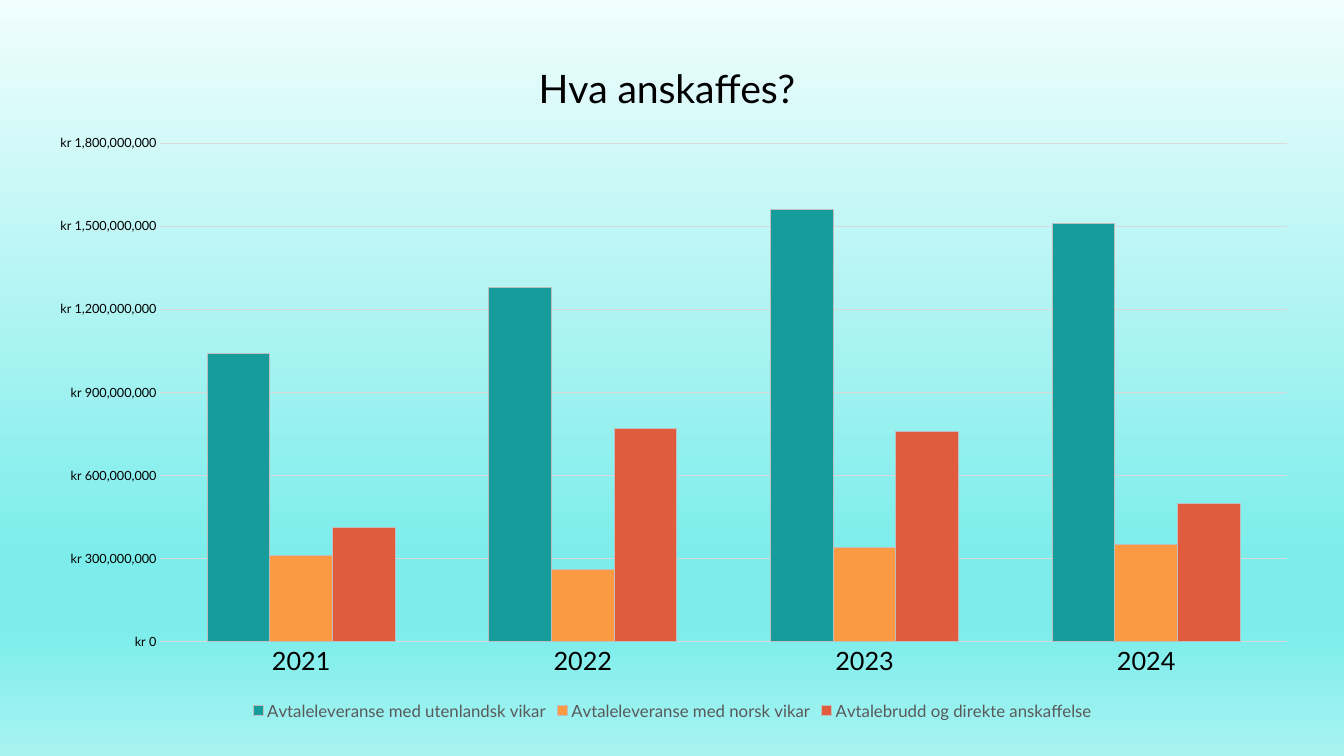
from lxml import etree
from pptx import Presentation
from pptx.chart.data import CategoryChartData
from pptx.dml.color import RGBColor
from pptx.enum import chart as kinds
from pptx.oxml import ns
from pptx.util import Inches, Pt

FONT = "Lato"
BLACK = RGBColor(0x00, 0x00, 0x00)
GREY = RGBColor(0x59, 0x59, 0x59)
GRID = RGBColor(0xD9, 0xD9, 0xD9)
OUTLINE = RGBColor(0xBF, 0xBF, 0xBF)
TEAL = RGBColor(0x16, 0x9C, 0x9A)
ORANGE = RGBColor(0xFA, 0x9A, 0x42)
RED = RGBColor(0xE1, 0x5C, 0x3D)
PALE = RGBColor(0xF0, 0xFD, 0xFD)
AQUA = RGBColor(0x7C, 0xED, 0xEB)
LIGHT_AQUA = RGBColor(0xA8, 0xF3, 0xF2)

BACKGROUND_STOPS = [(0, PALE), (74, AQUA), (83, AQUA), (100, LIGHT_AQUA)]
MILLION = 1_000_000
YEARS = ["2021", "2022", "2023", "2024"]
SERIES = [  # name, colour, millions of kroner per year
    ("Avtaleleveranse med utenlandsk vikar", TEAL, [1040, 1280, 1560, 1510]),
    ("Avtaleleveranse med norsk vikar", ORANGE, [310, 260, 340, 350]),
    ("Avtalebrudd og direkte anskaffelse", RED, [410, 770, 760, 500]),
]


def set_background(page, stops):
    """Fill the page with a gradient running from top to bottom."""
    fill = page.background.fill
    fill.gradient()
    gradient = page.background._cSld.find(".//" + ns.qn("a:gradFill"))
    stop_list = gradient.find(ns.qn("a:gsLst"))
    for stop in list(stop_list):
        stop_list.remove(stop)
    for percent, color in stops:
        stop = etree.SubElement(stop_list, ns.qn("a:gs"), pos=str(percent * 1000))
        etree.SubElement(stop, ns.qn("a:srgbClr"), val=str(color))
    gradient.find(ns.qn("a:lin")).set("ang", str(90 * 60000))


def format_font(font, size, color=BLACK):
    font.name, font.size, font.bold = FONT, Pt(size), False
    font.color.rgb = color


def place(element, index, **fractions):
    """Give a chart part a manual layout, in fractions of the chart."""
    layout = element.find(ns.qn("c:layout"))
    if layout is None:
        layout = etree.Element(ns.qn("c:layout"))
        element.insert(index, layout)
    manual = etree.SubElement(layout, ns.qn("c:manualLayout"))
    if "w" in fractions:
        etree.SubElement(manual, ns.qn("c:layoutTarget"), val="inner")
    for mode in ("xMode", "yMode"):
        etree.SubElement(manual, ns.qn("c:" + mode), val="edge")
    for name, value in fractions.items():
        etree.SubElement(manual, ns.qn("c:" + name), val=str(value))


def add_title(chart, wording):
    chart.has_title = True
    para = chart.chart_title.text_frame.paragraphs[0]
    span = para.add_run()
    span.text = wording
    format_font(span.font, 28)
    place(chart.chart_title._element, 1, x=0.39, y=0.03)


def format_axis(axis, size):
    axis.major_tick_mark = axis.minor_tick_mark = kinds.XL_TICK_MARK.NONE
    axis.format.line.fill.background()
    format_font(axis.tick_labels.font, size)


def format_scale(axis):
    axis.minimum_scale, axis.maximum_scale = 0, 1800 * MILLION
    axis.major_unit = 300 * MILLION
    axis.tick_labels.number_format = '"kr"\\ #,##0'
    axis.tick_labels.number_format_is_linked = False
    axis.has_major_gridlines = True
    line = axis.major_gridlines.format.line
    line.color.rgb, line.width = GRID, Pt(0.75)


def add_legend(chart):
    chart.has_legend = True
    chart.legend.position = kinds.XL_LEGEND_POSITION.BOTTOM
    chart.legend.include_in_layout = False
    format_font(chart.legend.font, 12, GREY)


def add_column_chart(page):
    data = CategoryChartData()
    data.categories = YEARS
    for name, _, millions in SERIES:
        data.add_series(name, [value * MILLION for value in millions])
    chart = page.shapes.add_chart(
        kinds.XL_CHART_TYPE.COLUMN_CLUSTERED,
        Inches(0.32), Inches(0.32), Inches(12.7), Inches(6.87), data,
    ).chart
    format_font(chart.font, 10)

    # Columns
    plot = chart.plots[0]
    plot.gap_width, plot.overlap, plot.vary_by_categories = 150, 0, False
    for series, (_, color, _) in zip(plot.series, SERIES):
        series.format.fill.solid()
        series.format.fill.fore_color.rgb = color
        series.format.line.color.rgb = OUTLINE
        series.format.line.width = Pt(0.75)

    # Axes, title and legend
    format_axis(chart.category_axis, 18)
    format_axis(chart.value_axis, 9)
    format_scale(chart.value_axis)
    add_title(chart, "Hva anskaffes?")
    add_legend(chart)
    plot_area = chart._chartSpace.chart.plotArea
    place(plot_area, 0, x=0.1, y=0.16, w=0.88, h=0.72)


def main():
    deck = Presentation()
    deck.slide_width, deck.slide_height = Inches(13.33), Inches(7.5)
    page = deck.slides.add_slide(deck.slide_layouts[6])
    set_background(page, BACKGROUND_STOPS)
    add_column_chart(page)
    deck.save("out.pptx")


if __name__ == "__main__":
    main()
